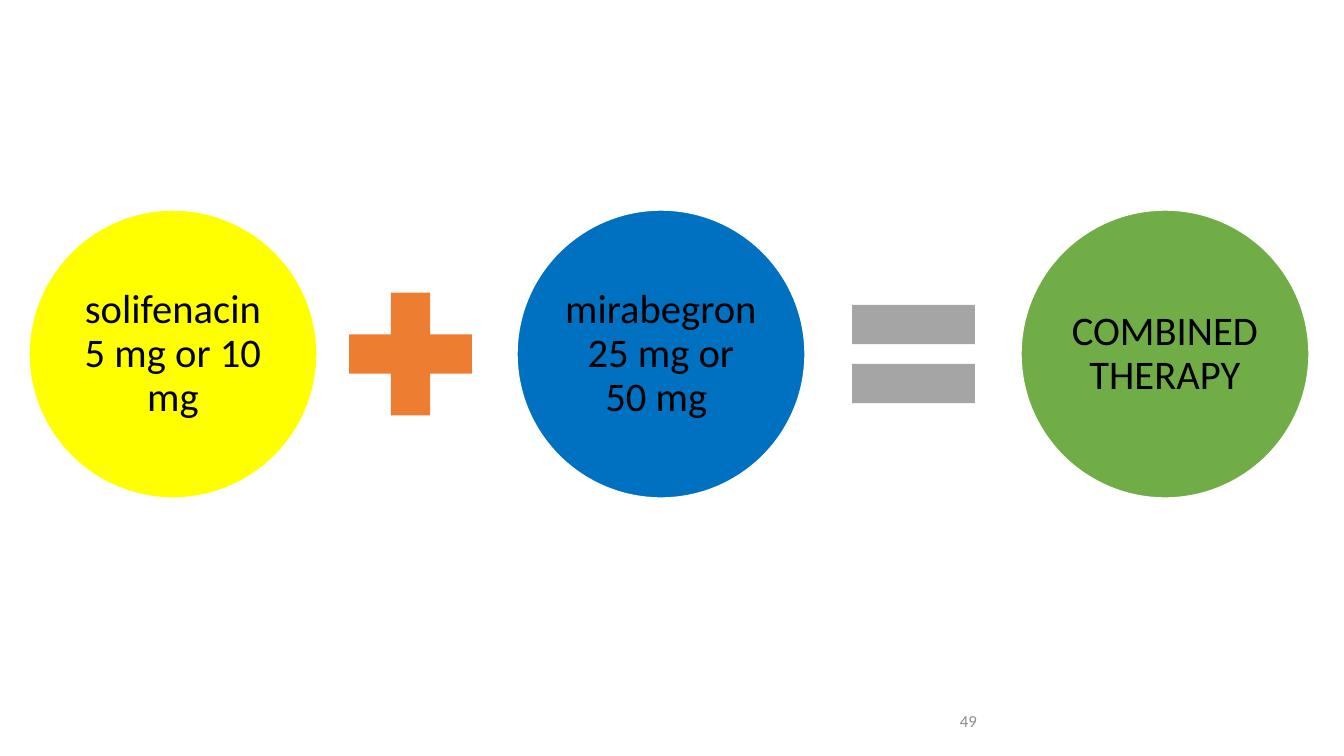
from pptx import Presentation
from pptx import util as u
from pptx.dml.color import RGBColor
from pptx.enum import shapes, text

PX = 914400 / 100.8
COLORS = {
    "solifenacin": "FFFF00",
    "mirabegron": "0070C0",
    "combined": "70AD47",
    "plus": "ED7D31",
    "equals": "A5A5A5",
    "outline": "FFFFFF",
    "label": "000000",
    "number": "8C8C8C",
}
CIRCLE = 288
SIGN = 167


def px(length):
    return u.Emu(round(length * PX))


def color(name):
    return RGBColor.from_string(COLORS[name])


def add_filled(slide, preset, box, fill):
    part = slide.shapes.add_shape(preset, *map(px, box))
    part.shadow.inherit = False
    part.fill.solid()
    part.fill.fore_color.rgb = color(fill)
    part.line.fill.background()
    return part


def add_run(paragraph, words, size, ink):
    run = paragraph.add_run()
    run.text = words
    run.font.size = u.Pt(size)
    run.font.name = "Calibri"
    run.font.color.rgb = color(ink)


def add_therapy(slide, box, fill, words):
    circle = add_filled(slide, shapes.MSO_SHAPE.OVAL, box, fill)
    circle.line.color.rgb = color("outline")
    circle.line.width = u.Pt(1)
    frame = circle.text_frame
    frame.word_wrap = True
    frame.vertical_anchor = text.MSO_ANCHOR.MIDDLE
    frame.margin_left = frame.margin_right = px(4)
    frame.margin_top = frame.margin_bottom = px(4)
    label = frame.paragraphs[0]
    label.alignment = text.PP_ALIGN.CENTER
    label.line_spacing = 0.9
    add_run(label, words, 29, "label")


def add_equation(slide, box):
    """Place circles and signs along the vertical middle of the box."""
    left, top, _, height = box
    therapies = [
        (0, "solifenacin", "solifenacin 5 mg or 10 mg"),
        (488, "mirabegron", "mirabegron 25 mg or 50 mg "),
        (992, "combined", "COMBINED THERAPY"),
    ]
    signs = [
        (298, "plus", shapes.MSO_SHAPE.MATH_PLUS),
        (801, "equals", shapes.MSO_SHAPE.MATH_EQUAL),
    ]
    circle_top = top + (height - CIRCLE) / 2
    for x, fill, words in therapies:
        add_therapy(slide, (left + x, circle_top, CIRCLE, CIRCLE), fill, words)
    sign_top = top + (height - SIGN) / 2
    for x, fill, preset in signs:
        add_filled(slide, preset, (left + x, sign_top, SIGN, SIGN), fill)


def add_page_number(slide, box, number):
    page = slide.shapes.add_textbox(*map(px, box))
    frame = page.text_frame
    frame.word_wrap = True
    frame.vertical_anchor = text.MSO_ANCHOR.MIDDLE
    add_run(frame.paragraphs[0], number, 12, "number")


def main():
    deck = Presentation()
    deck.slide_width, deck.slide_height = px(1344), px(756)
    slide = deck.slides.add_slide(deck.slide_layouts[6])
    add_equation(slide, (29, 210, 1280, CIRCLE))
    add_page_number(slide, (950, 701, 302, 40), "49")
    deck.save("out.pptx")


if __name__ == "__main__":
    main()
